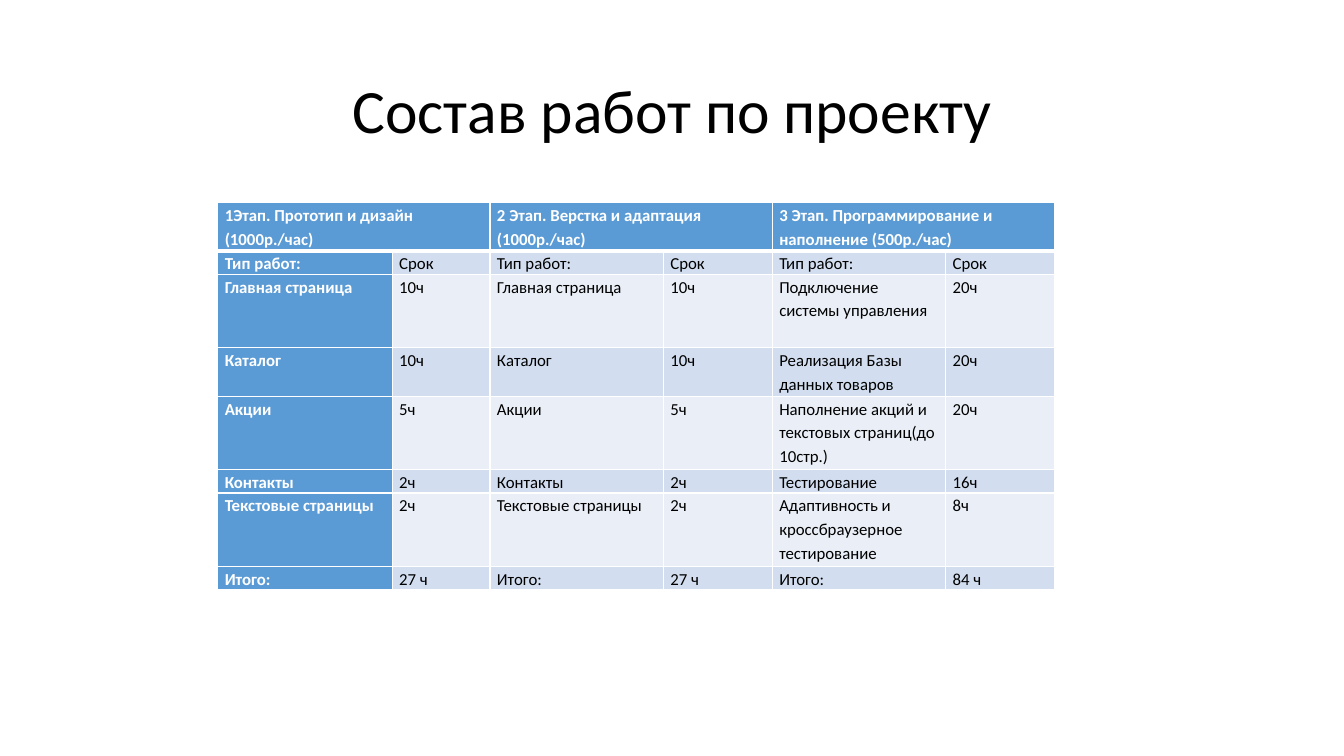
from dataclasses import dataclass

from lxml import etree
from pptx import Presentation
from pptx.dml.color import RGBColor
from pptx.enum.text import MSO_ANCHOR, PP_ALIGN
from pptx.oxml.ns import qn
from pptx.util import Inches, Pt

MIDDLE = MSO_ANCHOR.MIDDLE
CENTER = PP_ALIGN.CENTER
LEFT = PP_ALIGN.LEFT


@dataclass(frozen=True)
class Theme:
    font: str = "Calibri"
    dark: str = "000000"
    light: str = "FFFFFF"
    head: str = "5B9BD5"
    bands: tuple = ("EAEFF7", "D2DEEF")
    title: int = 44
    body: int = 12
    thin: int = 1
    thick: int = 3


class Deck:
    def __init__(self, theme):
        self.theme = theme
        self.file = Presentation()
        self.file.slide_width = Inches(13.33)
        self.file.slide_height = Inches(7.5)
        self.slide = self.file.slides.add_slide(self.file.slide_layouts[6])

    def label(self, frame, text, size, color, bold=False, align=LEFT, gap=1.15):
        for index, line in enumerate(text.split("\n")):
            para = frame.paragraphs[0] if index == 0 else frame.add_paragraph()
            para.alignment = align
            para.line_spacing = gap
            run = para.add_run()
            run.text = line
            run.font.name = self.theme.font
            run.font.size = Pt(size)
            run.font.bold = bold
            run.font.color.rgb = RGBColor.from_string(color)

    def title(self, text, left, top, width, height):
        box = self.slide.shapes.add_textbox(
            Inches(left), Inches(top), Inches(width), Inches(height))
        frame = box.text_frame
        frame.word_wrap = True
        frame.vertical_anchor = MIDDLE
        self.label(frame, text, self.theme.title, self.theme.dark, align=CENTER, gap=0.9)

    def border(self, cell, sides):
        props = cell._tc.get_or_add_tcPr()
        for side, width in sides.items():
            line = etree.SubElement(props, qn(f"a:ln{side}"), w=str(Pt(width)))
            fill = etree.SubElement(line, qn("a:solidFill"))
            etree.SubElement(fill, qn("a:srgbClr"), val=self.theme.light)

    def cell(self, cell, text, row, col):
        theme = self.theme
        strong = row == 0 or col == 0
        cell.margin_left = cell.margin_right = Inches(0.07)
        cell.margin_top = cell.margin_bottom = 0
        self.border(cell, {
            "L": theme.thin,
            "R": theme.thin,
            "T": theme.thick if row == 1 else theme.thin,
            "B": theme.thick if row == 0 else theme.thin,
        })
        cell.fill.solid()
        color = theme.head if strong else theme.bands[row % 2]
        cell.fill.fore_color.rgb = RGBColor.from_string(color)
        if text:
            self.label(cell.text_frame, text, theme.body,
                       theme.light if strong else theme.dark, strong)

    def table(self, heads, rows, left, top, widths, heights):
        grid = self.slide.shapes.add_table(
            len(heights), len(widths), Inches(left), Inches(top),
            Inches(sum(widths)), Inches(sum(heights))).table
        for col, width in zip(grid.columns, widths):
            col.width = Inches(width)
        for row, height in zip(grid.rows, heights):
            row.height = Inches(height)
        first = [text for head in heads for text in (head, "")]
        for row, texts in enumerate([first, *rows]):
            for col, text in enumerate(texts):
                self.cell(grid.cell(row, col), text, row, col)
        for col in range(0, len(widths), 2):
            grid.cell(0, col).merge(grid.cell(0, col + 1))


STAGES = [
    "1Этап. Прототип и дизайн\n(1000р./час)",
    "2 Этап. Верстка и адаптация\n(1000р./час)",
    "3 Этап. Программирование и наполнение (500р./час)",
]
TASKS = [
    ("Тип работ:", "Срок", "Тип работ:", "Срок"),
    ("Главная страница", "10ч", "Подключение системы управления", "20ч"),
    ("Каталог", "10ч", "Реализация Базы данных товаров", "20ч"),
    ("Акции", "5ч", "Наполнение акций и текстовых страниц(до 10стр.)", "20ч"),
    ("Контакты", "2ч", "Тестирование", "16ч"),
    ("Текстовые страницы", "2ч", "Адаптивность и кроссбраузерное тестирование", "8ч"),
    ("Итого:", "27 ч", "Итого:", "84 ч"),
]


def main():
    deck = Deck(Theme())
    deck.title("Состав работ по проекту", 0.92, 0.4, 11.5, 1.45)
    rows = [(page, time, page, time, work, term) for page, time, work, term in TASKS]
    deck.table(STAGES, rows, 2.16, 2.01,
               [1.73, 0.97, 1.72, 1.08, 1.72, 1.08],
               [0.48, 0.23, 0.73, 0.48, 0.73, 0.23, 0.73, 0.23])
    deck.file.save("out.pptx")


if __name__ == "__main__":
    main()
